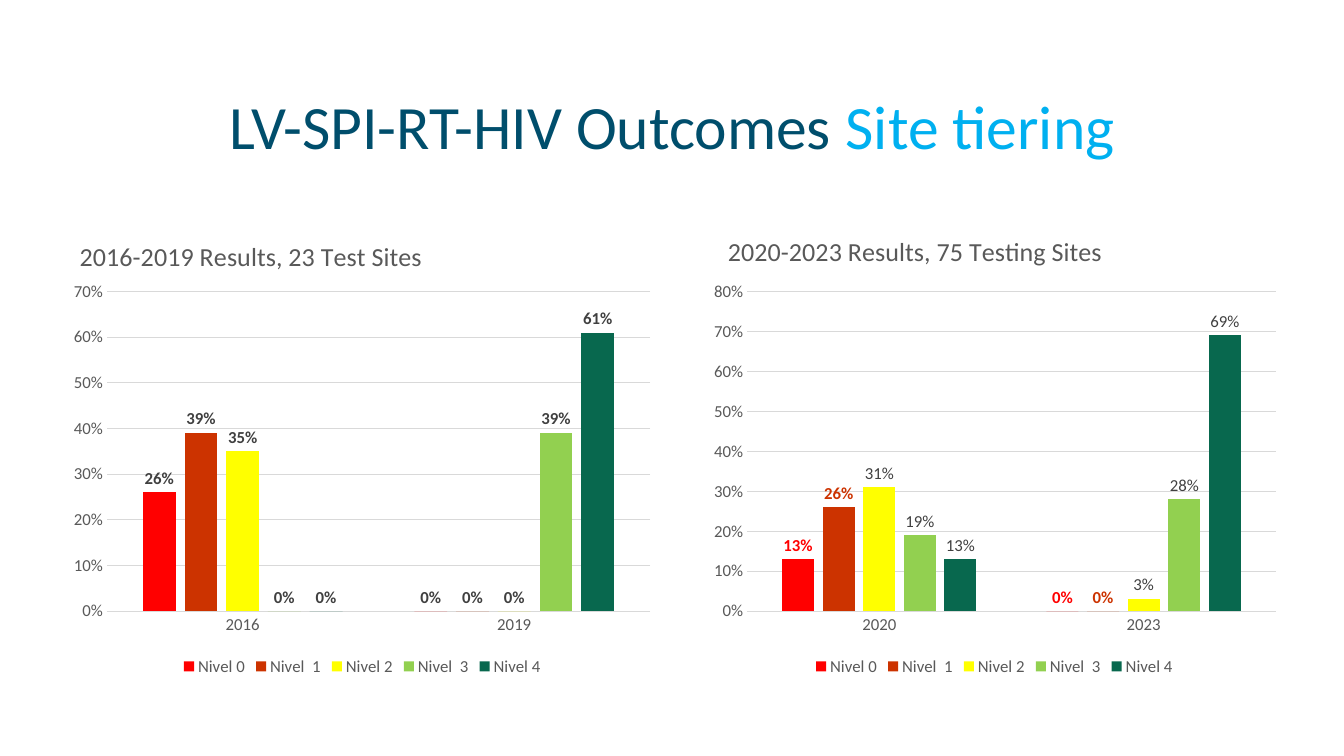
from pptx import Presentation
from pptx.chart.data import CategoryChartData
from pptx.dml.color import RGBColor
from pptx.enum.chart import XL_CHART_TYPE, XL_LABEL_POSITION, XL_LEGEND_POSITION, XL_TICK_MARK
from pptx.enum.text import MSO_ANCHOR, PP_ALIGN
from pptx.oxml import parse_xml
from pptx.oxml.ns import nsdecls, qn
from pptx.util import Pt

COLUMNS = XL_CHART_TYPE.COLUMN_CLUSTERED
OUTSIDE_END = XL_LABEL_POSITION.OUTSIDE_END
LEGEND_BOTTOM = XL_LEGEND_POSITION.BOTTOM
NO_TICK = XL_TICK_MARK.NONE
MIDDLE = MSO_ANCHOR.MIDDLE
CENTER = PP_ALIGN.CENTER

THEME = {
    "font": "Calibri",
    "headline_size": 44, "title_size": 18.6, "chart_size": 12,
    "navy": "004E6C", "sky": "00B0F0",
    "text": "595959", "label": "404040", "grid": "D9D9D9",
    "levels": ["FF0000", "CC3300", "FFFF00", "92D050", "08684E"],
}
PERCENT = "0%"
HEADLINE = [("LV-SPI-RT-HIV Outcomes", "navy"), (" Site tiering", "sky")]
HEADLINE_BOX = (110.9, 54, 738.7, 77)
LEVELS = ["Nivel 0", "Nivel  1", "Nivel 2", "Nivel  3", "Nivel 4"]
CHARTS = [
    {
        "title": "2016-2019 Results, 23 Test Sites",
        "years": ["2016", "2019"],
        "values": [(0.26, 0), (0.39, 0), (0.35, 0), (0, 0.39), (0, 0.61)],
        "label_colors": [THEME["label"]] * 5,
        "bold_labels": 5,
        "maximum": 0.7,
        "box": (44.6, 149.8, 428.4, 336.2),
        "title_at": (53.5, 167),
        "plot_box": (76.4, 208.2, 388, 228.4),
    },
    {
        "title": "2020-2023 Results, 75 Testing Sites",
        "years": ["2020", "2023"],
        "values": [(0.13, 0), (0.26, 0), (0.31, 0.03), (0.19, 0.28), (0.13, 0.69)],
        "label_colors": THEME["levels"][:2] + [THEME["label"]] * 3,
        "bold_labels": 2,
        "maximum": 0.8,
        "box": (501.1, 149.8, 418.3, 336.2),
        "title_at": (516.5, 163),
        "plot_box": (533.6, 208.2, 377.8, 228.4),
    },
]


def style(font, size, color, bold=False):
    font.name = THEME["font"]
    font.size = Pt(size)
    font.bold = bold
    font.color.rgb = RGBColor.from_string(color)


def draw_line(line):
    line.color.rgb = RGBColor.from_string(THEME["grid"])
    line.width = Pt(0.75)


def manual_layout(chart_box, position, extent=(), inner=False):
    left, top, width, height = chart_box
    shares = {"x": (position[0] - left) / width, "y": (position[1] - top) / height}
    if extent:
        shares.update(w=extent[0] / width, h=extent[1] / height)
    target = '<c:layoutTarget val="inner"/>' if inner else ""
    modes = '<c:xMode val="edge"/><c:yMode val="edge"/>'
    sides = "".join(f'<c:{side} val="{share:.4f}"/>' for side, share in shares.items())
    return parse_xml(
        f'<c:layout {nsdecls("c")}><c:manualLayout>{target}{modes}{sides}'
        "</c:manualLayout></c:layout>"
    )


def drop_layout(element):
    for layout in element.findall(qn("c:layout")):
        element.remove(layout)


def add_headline(page):
    frame = page.shapes.add_textbox(*map(Pt, HEADLINE_BOX)).text_frame
    frame.word_wrap = True
    frame.vertical_anchor = MIDDLE
    para = frame.paragraphs[0]
    para.alignment = CENTER
    para.line_spacing = 0.9
    for text, color in HEADLINE:
        span = para.add_run()
        span.text = text
        style(span.font, THEME["headline_size"], THEME[color])


def add_title(chart, content):
    title = chart.chart_title
    title.text_frame.text = content["title"]
    style(title.text_frame.paragraphs[0].runs[0].font, THEME["title_size"], THEME["text"])
    title.include_in_layout = False
    drop_layout(title.element)
    title.element.find(qn("c:tx")).addnext(manual_layout(content["box"], content["title_at"]))


def style_axes(chart, maximum):
    years, shares = chart.category_axis, chart.value_axis
    for axis in (years, shares):
        axis.major_tick_mark = NO_TICK
        axis.minor_tick_mark = NO_TICK
        style(axis.tick_labels.font, THEME["chart_size"], THEME["text"])
    draw_line(years.format.line)
    shares.format.line.fill.background()
    shares.has_major_gridlines = True
    draw_line(shares.major_gridlines.format.line)
    shares.minimum_scale, shares.maximum_scale, shares.major_unit = 0, maximum, 0.1
    shares.tick_labels.number_format = PERCENT
    shares.tick_labels.number_format_is_linked = False


def style_series(chart, content):
    plot = chart.plots[0]
    plot.gap_width = 219
    plot.overlap = -27
    plot.vary_by_categories = False
    for index, series in enumerate(plot.series):
        series.invert_if_negative = False
        series.format.fill.solid()
        series.format.fill.fore_color.rgb = RGBColor.from_string(THEME["levels"][index])
        labels = series.data_labels
        labels.show_value = True
        labels.position = OUTSIDE_END
        labels.number_format = PERCENT
        labels.number_format_is_linked = False
        style(labels.font, THEME["chart_size"], content["label_colors"][index],
              index < content["bold_labels"])


def add_results_chart(page, content):
    data = CategoryChartData(number_format=PERCENT)
    data.categories = content["years"]
    for level, values in zip(LEVELS, content["values"]):
        data.add_series(level, values)
    chart = page.shapes.add_chart(COLUMNS, *map(Pt, content["box"]), data).chart
    style(chart.font, THEME["chart_size"], THEME["text"])
    add_title(chart, content)
    style_axes(chart, content["maximum"])
    style_series(chart, content)
    chart.has_legend = True
    chart.legend.position = LEGEND_BOTTOM
    chart.legend.include_in_layout = False
    style(chart.legend.font, THEME["chart_size"], THEME["text"])
    plot_area = chart.element.find(".//" + qn("c:plotArea"))
    drop_layout(plot_area)
    plot_box = content["plot_box"]
    plot_area.insert(0, manual_layout(content["box"], plot_box[:2], plot_box[2:], True))


def main():
    deck = Presentation()
    deck.slide_width, deck.slide_height = Pt(960), Pt(540)
    page = deck.slides.add_slide(deck.slide_layouts[6])
    add_headline(page)
    for content in CHARTS:
        add_results_chart(page, content)
    deck.save("out.pptx")


if __name__ == "__main__":
    main()
